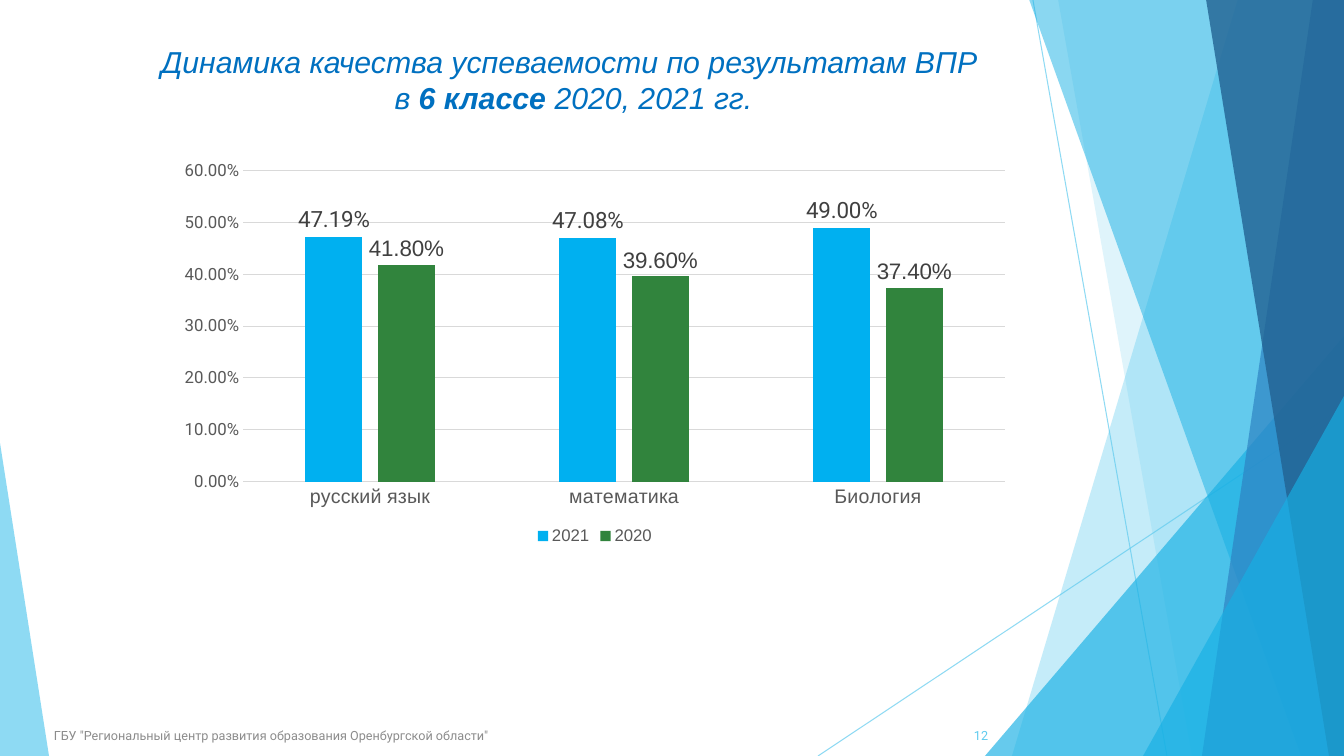
from lxml import etree
from pptx import Presentation
from pptx.chart.data import CategoryChartData
from pptx.dml.color import RGBColor
from pptx.enum import chart as ch, shapes, text
from pptx.oxml import parse_xml
from pptx.oxml.ns import nsdecls, qn
from pptx.util import Pt

PX = 9525 * 96 / 100.8
WIDTH, HEIGHT = 1344, 756

TITLE = [("Динамика качества успеваемости по результатам ВПР \vв ", False),
         ("6 классе ", True), ("2020, 2021 гг.", False)]
FOOTER = [('ГБУ "Региональный центр развития образования Оренбургской области"', False)]
PAGE = [("12", False)]
SUBJECTS = ["русский язык", "математика", "Биология"]
YEARS = [("2021", [0.4719, 0.4708, 0.49], "00B0F0", "Roboto"),
         ("2020", [0.418, 0.396, 0.374], "31843D", "Arial")]
CHART_BOX = (167, 153, 856, 396)
PLOT_BOX = (243, 171, 762, 311)

RAYS = [((1033, 0), (1167, HEIGHT)), ((WIDTH, 406), (818, HEIGHT))]
# Bands reach the right edge: top-left x, bottom-left x, colour, opacity %
# Wedges: box, apex position, colour, opacity %
FACETS = [
    ("band", (1238, 1012), "5FCBEF", 36),
    ("band", (1058, 1192), "5FCBEF", 20),
    ("wedge", (985, 336, 359, 420), 1, "17B0E4", 66),
    ("band", (1029, 1301), "17B0E4", 50),
    ("band", (1313, 1202), "2E83C3", 70),
    ("band", (1206, 1329), "226292", 80),
    ("wedge", (1143, 396, 201, 360), 1, "17B0E4", 66),
    ("wedge", (0, 443, 49, 313), 0, "5FCBEF", 70),
]


def px(*lengths):
    return [round(length * PX) for length in lengths]


def rgb(code):
    return RGBColor.from_string(code)


def paint(fill, code, opacity=100):
    fill.solid()
    fill.fore_color.rgb = rgb(code)
    if opacity < 100:
        color = fill._xPr.find(".//" + qn("a:srgbClr"))
        etree.SubElement(color, qn("a:alpha")).set("val", str(opacity * 1000))


def style(font, name, size, code):
    for key, value in {"name": name, "size": Pt(size)}.items():
        setattr(font, key, value)
    font.color.rgb = rgb(code)


def add_ray(slide, start, end):
    ray = slide.shapes.add_connector(shapes.MSO_CONNECTOR.STRAIGHT, *px(*start, *end))
    ray.line.width = Pt(0.75)
    paint(ray.line.fill, "5FCBEF", 70)
    etree.SubElement(ray._element.spPr, qn("a:effectLst"))


def add_facet(slide, kind, place, *look):
    if kind == "band":
        top_x, bottom_x = place
        outline = slide.shapes.build_freeform(top_x, -1, scale=PX)
        outline.add_line_segments([(WIDTH, -1), (WIDTH, HEIGHT), (bottom_x, HEIGHT)], close=True)
        facet = outline.convert_to_shape()
    else:
        facet = slide.shapes.add_shape(shapes.MSO_SHAPE.ISOSCELES_TRIANGLE, *px(*place))
        facet.adjustments[0] = look[0]
        look = look[1:]
    paint(facet.fill, *look)
    facet.line.fill.background()
    facet.shadow.inherit = False


def add_text(slide, box, runs, align, font, size, code, italic=False):
    frame = slide.shapes.add_textbox(*px(*box)).text_frame
    frame.word_wrap = True
    frame.vertical_anchor = text.MSO_ANCHOR.MIDDLE
    line = frame.paragraphs[0]
    line.alignment = align
    for words, bold in runs:
        for i, part in enumerate(words.split("\v")):
            if i:
                line.add_line_break()
            run = line.add_run()
            run.text = part
            style(run.font, font, size, code)
            run.font.bold, run.font.italic = bold, italic


def fix_plot_area(chart):
    """Place the inner plot area at PLOT_BOX within the chart."""
    left, top, width, height = CHART_BOX
    x, y, w, h = PLOT_BOX
    shares = {"x": (x - left) / width, "y": (y - top) / height, "w": w / width, "h": h / height}
    parts = "".join(f'<c:{key} val="{share:.3f}"/>' for key, share in shares.items())
    layout = parse_xml(f'<c:layout {nsdecls("c")}><c:manualLayout><c:layoutTarget val="inner"/>'
                       f'<c:xMode val="edge"/><c:yMode val="edge"/>{parts}'
                       '</c:manualLayout></c:layout>')
    area = chart._chartSpace.chart.plotArea
    for old in area.findall(qn("c:layout")):
        area.remove(old)
    area.insert(0, layout)


def add_quality_chart(slide):
    data = CategoryChartData(number_format="0.00%")
    data.categories = SUBJECTS
    for year, shares, *_ in YEARS:
        data.add_series(year, shares)
    chart = slide.shapes.add_chart(ch.XL_CHART_TYPE.COLUMN_CLUSTERED, *px(*CHART_BOX), data).chart
    chart.has_title = False
    style(chart.font, "Roboto", 10, "000000")
    chart.has_legend = True
    chart.legend.position = ch.XL_LEGEND_POSITION.BOTTOM
    chart.legend.include_in_layout = False
    style(chart.legend.font, "Arial", 12, "595959")

    plot = chart.plots[0]
    for key, value in {"gap_width": 219, "overlap": -27, "vary_by_categories": False}.items():
        setattr(plot, key, value)
    for series, (_, _, code, font) in zip(plot.series, YEARS):
        paint(series.format.fill, code)
        labels = series.data_labels
        for key, value in {"show_value": True, "number_format": "0.00%",
                           "number_format_is_linked": False,
                           "position": ch.XL_LABEL_POSITION.OUTSIDE_END}.items():
            setattr(labels, key, value)
        style(labels.font, font, 16, "404040")

    subjects, shares = chart.category_axis, chart.value_axis
    for axis, font, size in ((subjects, "Arial", 14), (shares, "Roboto", 12)):
        axis.major_tick_mark = axis.minor_tick_mark = ch.XL_TICK_MARK.NONE
        style(axis.tick_labels.font, font, size, "595959")
    for key, value in {"minimum_scale": 0, "maximum_scale": 0.6, "major_unit": 0.1,
                       "has_major_gridlines": True}.items():
        setattr(shares, key, value)
    shares.tick_labels.number_format = "0.00%"
    shares.tick_labels.number_format_is_linked = False
    shares.format.line.fill.background()
    for line in (subjects.format.line, shares.major_gridlines.format.line):
        line.width = Pt(0.75)
        paint(line.fill, "D9D9D9")
    fix_plot_area(chart)


def main():
    deck = Presentation()
    deck.slide_width, deck.slide_height = px(WIDTH, HEIGHT)
    slide = deck.slides.add_slide(deck.slide_layouts[6])
    for ray in RAYS:
        add_ray(slide, *ray)
    for facet in FACETS:
        add_facet(slide, *facet)
    align = text.PP_ALIGN
    add_text(slide, (44, 716, 695, 40), FOOTER, align.LEFT, "Roboto", 9, "8C8C8C")
    add_text(slide, (922, 716, 76, 40), PAGE, align.RIGHT, "Roboto", 9, "5FCBEF")
    add_text(slide, (75, 38, 997, 83), TITLE, align.CENTER, "Arial", 21.6, "0070C0", italic=True)
    add_quality_chart(slide)
    deck.save("out.pptx")


if __name__ == "__main__":
    main()
